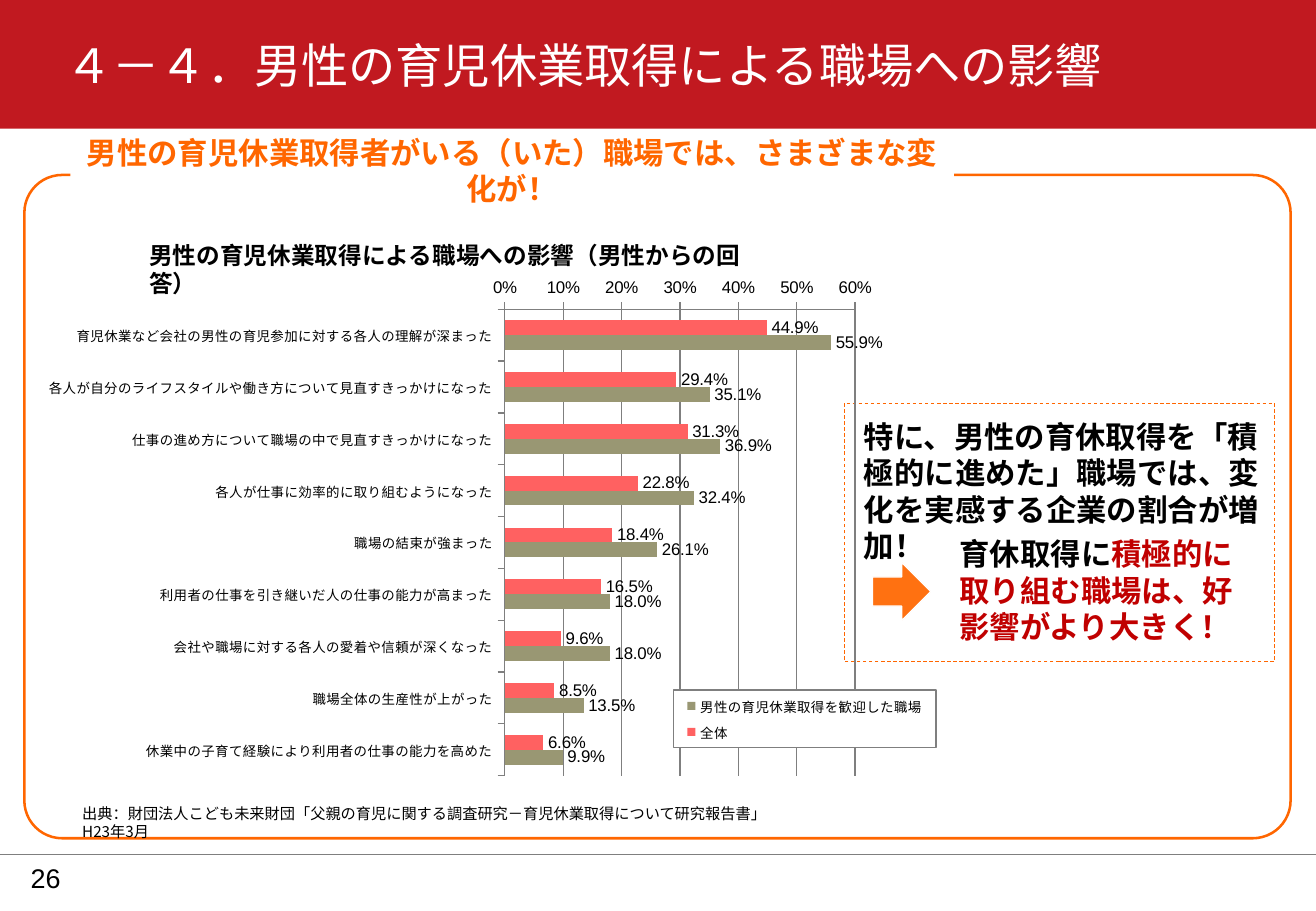
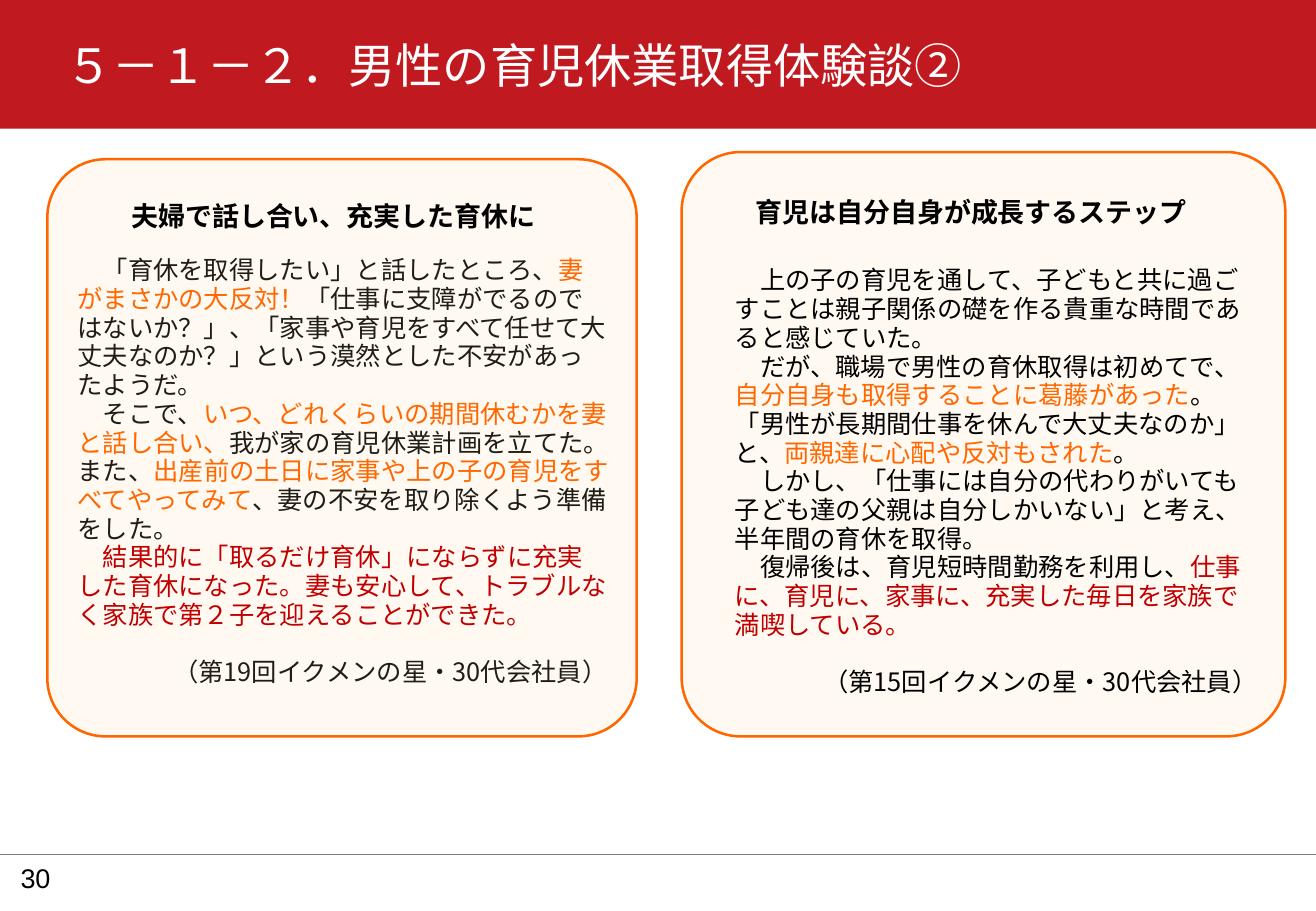
"""Build two slides on the effects of, and stories about, childcare leave taken by men."""
from pptx import Presentation
from pptx.chart.data import CategoryChartData
from pptx.dml.color import RGBColor
from pptx.enum.chart import XL_CHART_TYPE, XL_LABEL_POSITION, XL_LEGEND_POSITION, XL_TICK_MARK
from pptx.enum.dml import MSO_LINE
from pptx.enum.shapes import MSO_CONNECTOR, MSO_SHAPE
from pptx.enum.text import MSO_ANCHOR, PP_ALIGN
from pptx.oxml import parse_xml
from pptx.oxml.ns import nsdecls, qn
from pptx.util import Cm, Pt

C = {
    "band": "C11920", "white": "FFFFFF", "black": "000000", "rule": "7F7F7F",
    "orange": "FF6600", "accent": "FF6700", "arrow": "FF7111", "cream": "FFECD3",
    "red": "C00000", "ink": "1F1E16", "all": "FF6161", "welcome": "999773",
}
NOTO = "Noto Sans CJK JP"


def add_box(s, at, kind=None, fill=None, line=None, width=1.5, adj=None, anchor=MSO_ANCHOR.TOP, ins=(0.25, 0.13, 0.25, 0.13)):
    x, y, w, h = [Cm(v) for v in at]
    if kind is None:
        sp = s.shapes.add_textbox(x, y, w, h)
    else:
        sp = s.shapes.add_shape(kind, x, y, w, h)
        sp.shadow.inherit = False
        if adj is not None:
            sp.adjustments[0] = adj
        if fill:
            sp.fill.solid()
            sp.fill.fore_color.rgb = RGBColor.from_string(C[fill])
        else:
            sp.fill.background()
        if line:
            sp.line.color.rgb = RGBColor.from_string(C[line])
            sp.line.width = Pt(width)
        else:
            sp.line.fill.background()
    tf = sp.text_frame
    tf.word_wrap = True
    tf.vertical_anchor = anchor
    tf.margin_left, tf.margin_top, tf.margin_right, tf.margin_bottom = [Cm(v) for v in ins]
    return sp


def add_text(sp, *runs, size=18, font=NOTO, color="black", bold=False, align=PP_ALIGN.LEFT, leading=None, before=0, indent=0):
    tf = sp.text_frame
    p = tf.add_paragraph() if tf.text else tf.paragraphs[0]
    p.alignment = align
    if leading:
        p.line_spacing = Pt(leading)
    if before:
        p.space_before = Pt(before)
    if indent:
        p._p.get_or_add_pPr().set("indent", str(Pt(indent)))
    for run in runs:
        text, tint = (run, color) if isinstance(run, str) else run
        r = p.add_run()
        r.text = text
        r.font.size, r.font.bold, r.font.name = Pt(size), bold, font
        r.font.color.rgb = RGBColor.from_string(C[tint])
        r._r.get_or_add_rPr().append(parse_xml(f'<a:ea {nsdecls("a")} typeface="{NOTO}"/>'))


prs = Presentation()
prs.slide_width, prs.slide_height = Cm(27.51), Cm(19.05)

slides = []
for title, number, x in [
    ("４－４．男性の育児休業取得による職場への影響", "26", 0.64),
    ("５－１－２．男性の育児休業取得体験談②", "30", 0.43),
]:
    s = prs.slides.add_slide(prs.slide_layouts[6])
    rule = s.shapes.add_connector(MSO_CONNECTOR.STRAIGHT, 0, Cm(17.86), prs.slide_width, Cm(17.86))
    rule.line.color.rgb = RGBColor.from_string(C["rule"])
    rule.line.width = Pt(0.25)
    rule._element.spPr.append(parse_xml(f'<a:effectLst {nsdecls("a")}/>'))
    add_box(s, (0, 0, 27.51, 2.69), MSO_SHAPE.RECTANGLE, "band")
    sp = add_box(s, (1.37, 0.76, 24.77, 1.8), ins=(0, 0, 0, 0.15))
    add_text(sp, title, size=28, font="Arial", color="white")
    sp = add_box(s, (x, 17.86, 1.02, 0.99), anchor=MSO_ANCHOR.MIDDLE, ins=(0, 0.13, 0, 0.13))
    add_text(sp, number, size=16, font="Arial")
    slides.append(s)

s = slides[0]
add_box(s, (0.51, 3.66, 26.47, 13.87), MSO_SHAPE.ROUNDED_RECTANGLE, line="orange", adj=0.057)
sp = add_box(s, (2.87, 4.9, 13.23, 0.86))
add_text(sp, "男性の育児休業取得による職場への影響（男性からの回答）", size=14, font="Arial", bold=True)
sp = add_box(s, (1.47, 2.9, 18.47, 1.32), MSO_SHAPE.RECTANGLE, "white", anchor=MSO_ANCHOR.MIDDLE, ins=(0.1, 0, 0.1, 0))
add_text(sp, "男性の育児休業取得者がいる（いた）職場では、さまざまな変化が！", color="orange", bold=True, align=PP_ALIGN.CENTER)
add_box(s, (18.24, 11.76, 1.22, 1.22), MSO_SHAPE.RIGHT_ARROW, "arrow", "white", 0.75)
sp = add_box(s, (17.81, 8.61, 8.94, 3.28))
add_text(sp, "特に、男性の育休取得を「積極的に進めた」職場では、変化を実感する企業の割合が増加！", bold=True)
sp = add_box(s, (19.81, 10.92, 6.71, 2.84), anchor=MSO_ANCHOR.MIDDLE)
add_text(sp, "育休取得に", ("積極的に", "red"), bold=True)
add_text(sp, "取り組む職場は、好影響がより大きく！", color="red", bold=True)
sp = add_box(s, (17.65, 8.43, 8.99, 5.41), MSO_SHAPE.RECTANGLE, line="orange", width=0.5)
sp.line.dash_style = MSO_LINE.DASH
sp = add_box(s, (1.47, 16.69, 15.37, 0.64))
add_text(sp, "出典：財団法人こども未来財団「父親の育児に関する調査研究－育児休業取得について研究報告書」 H23年3月", size=9)

data = CategoryChartData()
data.categories = [
    "育児休業など会社の男性の育児参加に対する各人の理解が深まった",
    "各人が自分のライフスタイルや働き方について見直すきっかけになった",
    "仕事の進め方について職場の中で見直すきっかけになった",
    "各人が仕事に効率的に取り組むようになった",
    "職場の結束が強まった",
    "利用者の仕事を引き継いだ人の仕事の能力が高まった",
    "会社や職場に対する各人の愛着や信頼が深くなった",
    "職場全体の生産性が上がった",
    "休業中の子育て経験により利用者の仕事の能力を高めた",
]
data.add_series("全体", (0.449, 0.294, 0.313, 0.228, 0.184, 0.165, 0.096, 0.085, 0.066), "0.0%")
data.add_series("男性の育児休業取得を歓迎した職場", (0.559, 0.351, 0.369, 0.324, 0.261, 0.18, 0.18, 0.135, 0.099), "0.0%")
chart = s.shapes.add_chart(XL_CHART_TYPE.BAR_CLUSTERED, Cm(1.02), Cm(5.11), Cm(18.64), Cm(11.71), data).chart
chart.has_title = False
chart.font.size, chart.font.name = Pt(10), "Arial"
chart.font.color.rgb = RGBColor.from_string(C["black"])
plot = chart.plots[0]
plot.gap_width, plot.overlap, plot.vary_by_categories = 150, 0, False
for series, tint in zip(plot.series, ("all", "welcome")):
    series.format.fill.solid()
    series.format.fill.fore_color.rgb = RGBColor.from_string(C[tint])
    labels = series.data_labels
    labels.show_value = True
    labels.number_format, labels.number_format_is_linked = "0.0%", False
    labels.position = XL_LABEL_POSITION.OUTSIDE_END

cat, val = chart.category_axis, chart.value_axis
cat.reverse_order = True
cat.tick_labels.font.size = Pt(8)
val.minimum_scale, val.maximum_scale, val.major_unit = 0, 0.6, 0.1
val.tick_labels.number_format, val.tick_labels.number_format_is_linked = "0%", False
val.has_major_gridlines = True
for axis in (cat, val):
    axis.major_tick_mark = XL_TICK_MARK.OUTSIDE
for part in (cat, val, val.major_gridlines):
    part.format.line.color.rgb = RGBColor.from_string(C["rule"])
    part.format.line.width = Pt(0.75)

chart.has_legend = True
legend = chart.legend
legend.position = XL_LEGEND_POSITION.RIGHT
legend.include_in_layout = False
legend.font.size = Pt(8)
box = legend._element
for parent, index, target, area in [
    (chart._chartSpace.chart.plotArea, 0, '<c:layoutTarget val="inner"/>', (0.51, 0.116, 0.394, 0.833)),
    (box, 1, "", (0.7, 0.796, 0.295, 0.103)),
]:
    for old in parent.findall(qn("c:layout")):
        parent.remove(old)
    modes = "".join(f'<c:{k}Mode val="edge"/>' for k in "xy")
    sizes = "".join(f'<c:{k} val="{v}"/>' for k, v in zip("xywh", area))
    parent.insert(index, parse_xml(
        f'<c:layout {nsdecls("c")}><c:manualLayout>{target}{modes}{sizes}</c:manualLayout></c:layout>'))
box.find(qn("c:txPr")).addprevious(parse_xml(
    f'<c:spPr {nsdecls("c", "a")}><a:solidFill><a:srgbClr val="{C["white"]}"/></a:solidFill>'
    f'<a:ln w="9525"><a:solidFill><a:srgbClr val="{C["rule"]}"/></a:solidFill></a:ln></c:spPr>'))

s = slides[1]
stories = [
    ((14.25, 3.18, 12.62, 12.22), (14.96, 3.96, 10.69, 1.27), (15.11, 5.44, 11.43, 4.11), "black",
     "育児は自分自身が成長するステップ", [
         (15, ["上の子の育児を通して、子どもと共に過ごすことは親子関係の礎を作る貴重な時間であると感じていた。"]),
         (15, ["だが、職場で男性の育休取得は初めてで、", ("自分自身も取得することに葛藤があった", "accent"), "。"]),
         (0, ["「男性が長期間仕事を休んで大丈夫なのか」と、", ("両親達に心配や反対もされた", "accent"), "。"]),
         (15, ["しかし、「仕事には自分の代わりがいても子ども達の父親は自分しかいない」と考え、半年間の育休を取得。"]),
         (15, ["復帰後は、育児短時間勤務を利用し、", ("仕事に、育児に、家事に、充実した毎日を家族で満喫している。", "red")]),
     ], "（第15回イクメンの星・30代会社員）"),
    ((0.99, 3.33, 12.32, 12.07), (1.63, 4.04, 10.69, 1.27), (1.37, 5.23, 11.58, 5.23), "ink",
     "夫婦で話し合い、充実した育休に", [
         (15, ["「育休を取得したい」と話したところ、", ("妻がまさかの大反対！", "accent"),
               "「仕事に支障がでるのではないか？」、「家事や育児をすべて任せて大丈夫なのか？」という漠然とした不安があったようだ。"]),
         (15, ["そこで、", ("いつ、どれくらいの期間休むかを妻と話し合い、", "accent"), "我が家の育児休業計画を立てた。また、",
               ("出産前の土日に家事や上の子の育児をすべてやってみて", "accent"), "、妻の不安を取り除くよう準備をした。"]),
         (15, [("結果的に「取るだけ育休」にならずに充実した育休になった。妻も安心して、トラブルなく家族で第２子を迎えることができた。", "red")]),
     ], "（第19回イクメンの星・30代会社員）"),
]
for card_at, head_at, body_at, ink, head, paras, teller in stories:
    card = add_box(s, card_at, MSO_SHAPE.ROUNDED_RECTANGLE, "cream", "orange", adj=0.101)
    tint = card._element.spPr.find(qn("a:solidFill")).find(qn("a:srgbClr"))
    tint.append(parse_xml(f'<a:alpha {nsdecls("a")} val="31000"/>'))
    add_text(add_box(s, head_at), head, size=16, bold=True, align=PP_ALIGN.CENTER)
    body = add_box(s, body_at)
    for indent, runs in paras:
        add_text(body, *runs, size=15, color=ink, leading=17, indent=indent)
    add_text(body, teller, size=15, color=ink, leading=17, before=17, align=PP_ALIGN.RIGHT)

prs.save("out.pptx")
